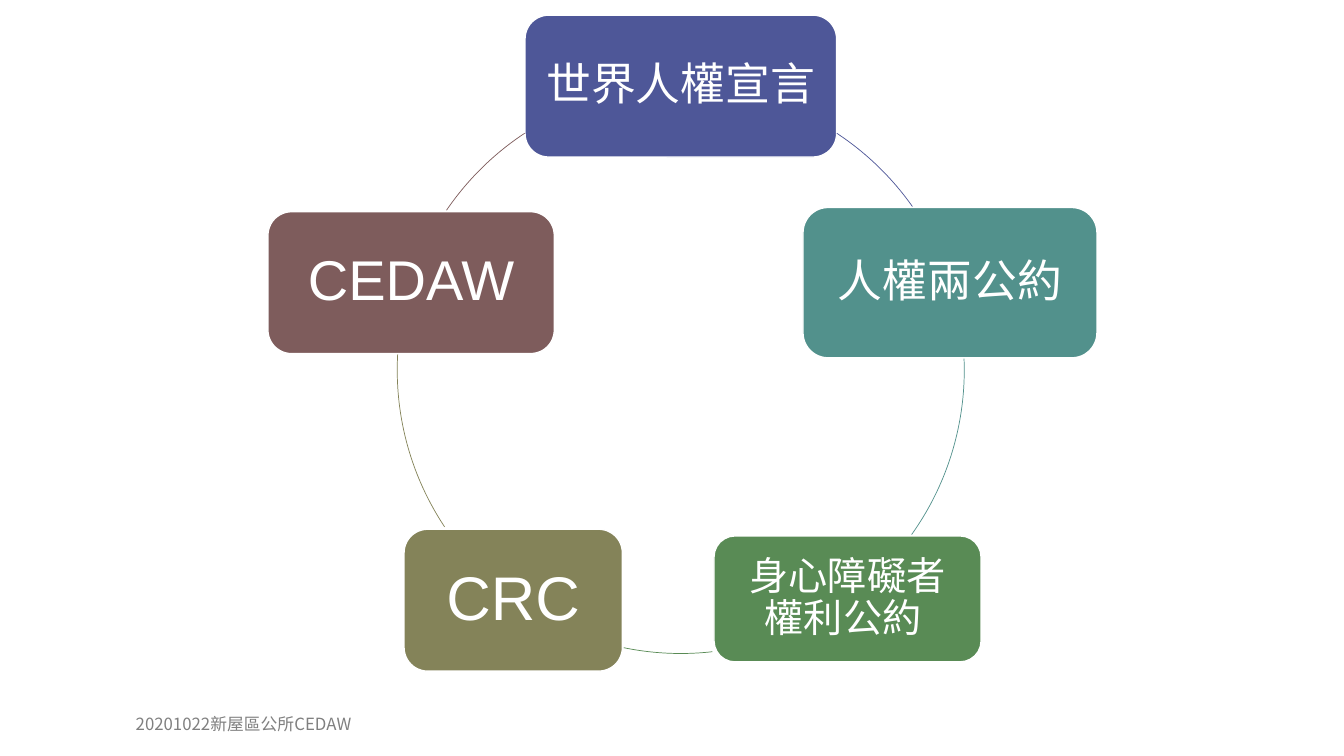
from lxml.etree import SubElement
from pptx import Presentation
from pptx.dml.color import RGBColor
from pptx.enum.shapes import MSO_SHAPE as Shape
from pptx.enum.text import MSO_ANCHOR as Anchor, PP_ALIGN as Align
from pptx.oxml.ns import qn
from pptx.util import Inches, Pt

WHITE = RGBColor(0xFF, 0xFF, 0xFF)
GRAY = RGBColor(0x80, 0x80, 0x80)
INDIGO = RGBColor(0x4E, 0x57, 0x98)
TEAL = RGBColor(0x52, 0x91, 0x8C)
GREEN = RGBColor(0x59, 0x8B, 0x55)
OLIVE = RGBColor(0x84, 0x83, 0x59)
MAROON = RGBColor(0x7E, 0x5C, 0x5C)

COLUMNS, ROWS = 160, 90
RING = (47.3, 10.3, 67.5, 67.5)
CJK_FONT = "Noto Sans CJK TC"

TREATIES = [
    ("世界人權宣言", (62.5, 1.8, 37.1, 16.9), INDIGO, "Quicksand", 32, (303.4, 324.8)),
    ("人權兩公約", (95.6, 24.7, 35, 17.9), TEAL, "Quicksand", 32, (357.7, 35.5)),
    ("身心障礙者權利公約 ", (85, 63.8, 31.8, 15), GREEN, "Arial", 28, (83.6, 101.6)),
    ("CRC", (48.1, 63, 26, 16.9), OLIVE, "Arial", 44, (146.4, 183.2)),
    ("CEDAW", (31.9, 25.2, 34.1, 16.9), MAROON, "Arial", 40, (214.3, 236.6)),
]


def write(frame, text, *, font, size, color, align, anchor, margins, line_spacing=1.0):
    frame.word_wrap = True
    frame.vertical_anchor = anchor
    frame.margin_left = frame.margin_right = Inches(margins[0])
    frame.margin_top = frame.margin_bottom = Inches(margins[1])
    paragraph = frame.paragraphs[0]
    paragraph.alignment = align
    paragraph.line_spacing = line_spacing
    run = paragraph.add_run()
    run.text = text
    run.font.size = Pt(size)
    run.font.color.rgb = color
    run.font.name = font
    SubElement(run.font._element, qn("a:ea"), typeface=CJK_FONT)


class Canvas:
    """Draws styled elements on a slide, placed by grid columns and rows."""

    def __init__(self, presentation):
        self.column = presentation.slide_width / COLUMNS
        self.row = presentation.slide_height / ROWS
        self.slide = presentation.slides.add_slide(presentation.slide_layouts[6])
        background = self.slide.background.fill
        background.solid()
        background.fore_color.rgb = WHITE

    def place(self, area):
        left, top, width, height = area
        return (round(left * self.column), round(top * self.row),
                round(width * self.column), round(height * self.row))

    def shape(self, kind, area, line_color, line_width):
        shape = self.slide.shapes.add_shape(kind, *self.place(area))
        shape.shadow.inherit = False
        shape.line.color.rgb = line_color
        shape.line.width = Pt(line_width)
        return shape

    def box(self, text, area, color, font, size):
        shape = self.shape(Shape.ROUNDED_RECTANGLE, area, WHITE, 1)
        shape.fill.solid()
        shape.fill.fore_color.rgb = color
        write(shape.text_frame, text, font=font, size=size, color=WHITE, align=Align.CENTER,
              anchor=Anchor.MIDDLE, margins=(0.12, 0.12), line_spacing=0.9)

    def arc(self, angles, color):
        shape = self.shape(Shape.ARC, RING, color, 0.5)
        shape.fill.background()
        for index, degrees in enumerate(angles):
            shape.adjustments[index] = degrees * 0.6

    def footer(self, text, area):
        box = self.slide.shapes.add_textbox(*self.place(area))
        write(box.text_frame, text, font=CJK_FONT, size=12, color=GRAY, align=Align.LEFT,
              anchor=Anchor.BOTTOM, margins=(0.13, 0.07))


def main():
    presentation = Presentation()
    presentation.slide_width = Inches(13.33)
    presentation.slide_height = Inches(7.5)
    canvas = Canvas(presentation)
    for text, area, color, font, size, angles in TREATIES:
        canvas.box(text, area, color, font, size)
        canvas.arc(angles, color)
    canvas.footer("20201022新屋區公所CEDAW", (14.6, 84, 36, 4.2))
    presentation.save("out.pptx")


if __name__ == "__main__":
    main()
